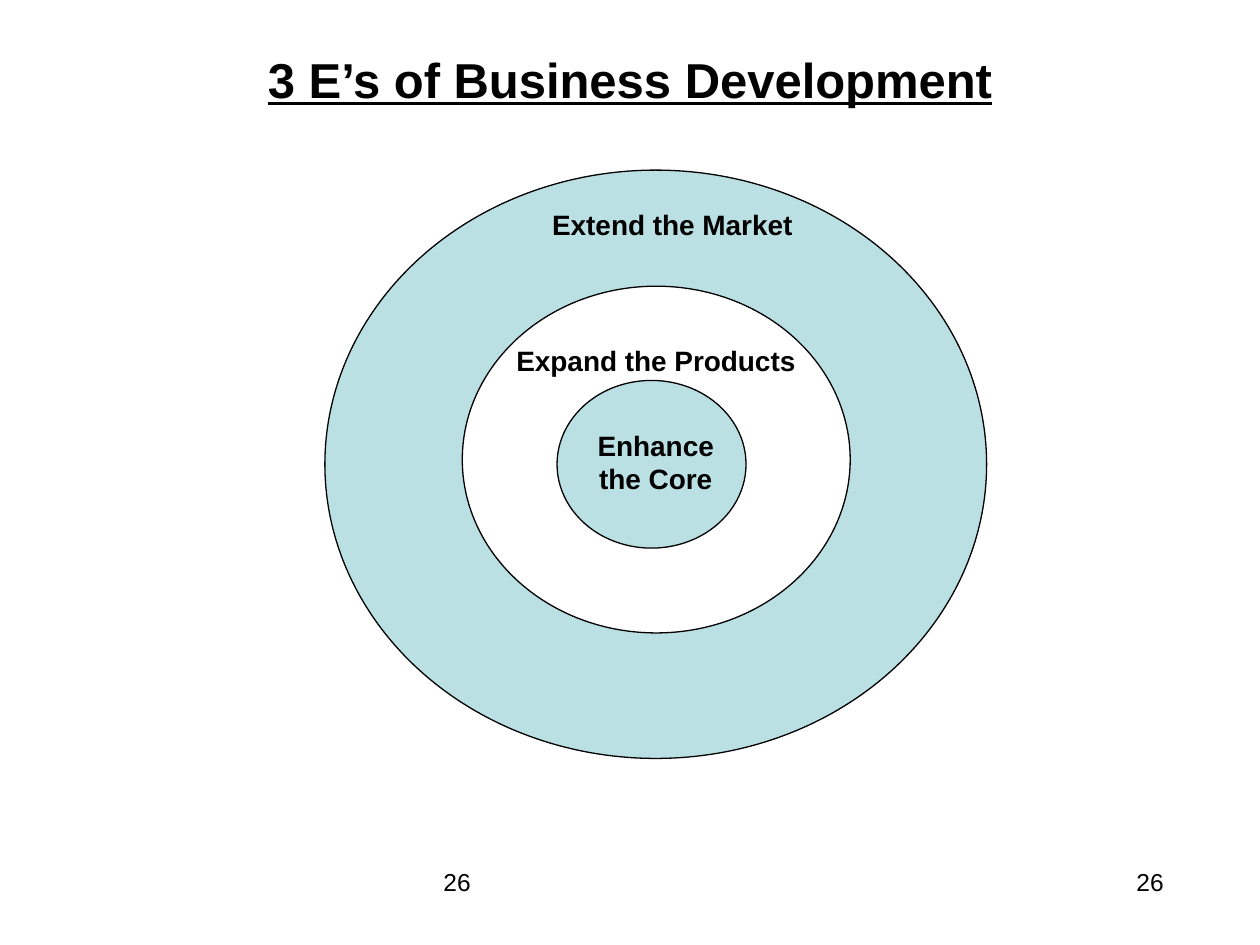
from pptx import Presentation
from pptx.dml.color import RGBColor
from pptx.enum.shapes import MSO_SHAPE as Shape
from pptx.enum.text import MSO_ANCHOR as Anchor, PP_ALIGN as Align
from pptx.util import Cm, Pt

BLACK, WHITE, TEAL = "000000", "FFFFFF", "BBE0E3"

RINGS = [
    ((6.55, 3.43, 13.34, 11.86), TEAL),
    ((9.32, 5.77, 7.82, 6.99), WHITE),
    ((11.23, 7.67, 3.81, 3.38), TEAL),
]
RING_LABELS = [
    ("Extend the Market", (9.96, 4.06, 7.19, 0.94), Align.CENTER),
    ("Expand the Products", (10.16, 6.81, 7.19, 0.94), Align.LEFT),
    ("Enhance the Core", (11.63, 8.51, 3.18, 1.63), Align.CENTER),
]
PAGE_NUMBERS = [(8.69, 17.35, 8.05, 1.32), (22.66, 17.35, 1.48, 1.32)]


def color(value):
    return RGBColor.from_string(value)


def lengths(frame):
    return [Cm(value) for value in frame]


def write(box, text, size, align, bold=False, underline=False):
    box.text_frame.word_wrap = True
    para = box.text_frame.paragraphs[0]
    para.text = text
    para.alignment = align
    font = para.font
    font.name = "Arial"
    font.size = Pt(size)
    font.bold = bold
    font.underline = underline
    font.color.rgb = color(BLACK)


def add_title(page, text):
    title = page.shapes.title
    title.left, title.top, title.width, title.height = lengths((1.27, 0, 22.86, 3.18))
    title.text_frame.vertical_anchor = Anchor.MIDDLE
    write(title, text, 28, Align.CENTER, bold=True, underline=True)


def add_ring(shapes, frame, fill):
    ring = shapes.add_shape(Shape.OVAL, *lengths(frame))
    ring.shadow.inherit = False
    ring.fill.solid()
    ring.fill.fore_color.rgb = color(fill)
    ring.line.color.rgb = color(BLACK)
    ring.line.width = Pt(0.75)


def add_text(shapes, text, frame, size, align=Align.LEFT, bold=False):
    write(shapes.add_textbox(*lengths(frame)), text, size, align, bold)


def main():
    deck = Presentation()
    deck.slide_width, deck.slide_height = Cm(25.4), Cm(19.05)
    page = deck.slides.add_slide(deck.slide_layouts[5])
    add_title(page, "3 E’s of Business Development")
    diagram = page.shapes.add_group_shape()
    for frame, fill in RINGS:
        add_ring(diagram.shapes, frame, fill)
    for text, frame, align in RING_LABELS:
        add_text(diagram.shapes, text, frame, 16, align, bold=True)
    for frame in PAGE_NUMBERS:
        add_text(page.shapes, "26", frame, 14)
    deck.save("out.pptx")


if __name__ == "__main__":
    main()
